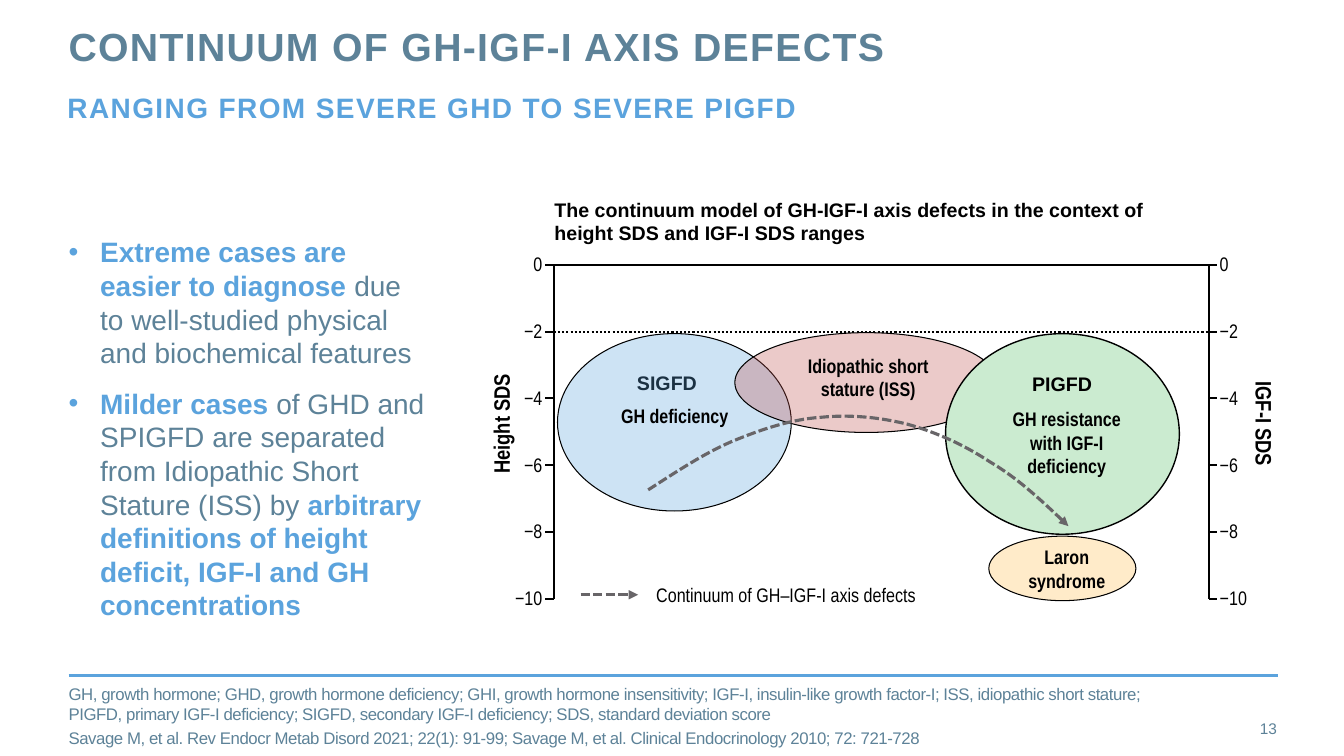
from lxml import etree
from pptx import Presentation
from pptx.dml.color import RGBColor
from pptx.enum.dml import MSO_LINE
from pptx.enum.shapes import MSO_CONNECTOR, MSO_SHAPE
from pptx.enum.text import MSO_ANCHOR, PP_ALIGN
from pptx.oxml.ns import qn
from pptx.util import Pt

LEFT, CENTER, RIGHT = PP_ALIGN.LEFT, PP_ALIGN.CENTER, PP_ALIGN.RIGHT
TOP, MIDDLE = MSO_ANCHOR.TOP, MSO_ANCHOR.MIDDLE
STRAIGHT, ELLIPSE = MSO_CONNECTOR.STRAIGHT, MSO_SHAPE.OVAL
DASHED, DOTTED = MSO_LINE.SQUARE_DOT, MSO_LINE.ROUND_DOT

BLACK = RGBColor(0x00, 0x00, 0x00)
SKY = RGBColor(0x5B, 0xA3, 0xDD)
SLATE = RGBColor(0x5D, 0x82, 0x98)
GREY = RGBColor(0x68, 0x65, 0x68)
ROSE = RGBColor(0xC0, 0x50, 0x4D)
MINT = RGBColor(0xCB, 0xEB, 0xD0)
AMBER = RGBColor(0xFF, 0xA4, 0x02)

SANS, NARROW = "Arial", "Arial Narrow"

MARGIN = 49
AXIS_LEFT, AXIS_RIGHT = 395.5, 863.5
AXIS_TOP, TICK_STEP, TICK_LENGTH = 189.2, 47.7, 6
TICKS = ["0", "−2", "−4", "−6", "−8", "−10"]
AXIS_BOTTOM = AXIS_TOP + TICK_STEP * (len(TICKS) - 1)

BULLETS = [
    [("Extreme cases are easier to diagnose ", True),
     ("due to well-studied physical and biochemical features", False)],
    [("Milder cases ", True),
     ("of GHD and SPIGFD are separated from Idiopathic Short Stature (ISS) by ", False),
     ("arbitrary definitions of height deficit, IGF-I and GH concentrations", True)],
]
FOOTNOTES = [
    "GH, growth hormone; GHD, growth hormone deficiency; GHI, growth hormone insensitivity; "
    "IGF-I, insulin-like growth factor-I; ISS, idiopathic short stature; PIGFD, primary IGF-I "
    "deficiency; SIGFD, secondary IGF-I deficiency; SDS, standard deviation score",
    "Savage M, et al. Rev Endocr Metab Disord 2021; 22(1): 91-99; "
    "Savage M, et al. Clinical Endocrinology 2010; 72: 721-728",
]
# Start point, then two control points and an end point per Bézier segment
CONTINUUM = [
    (463, 349.9), (483.1, 337), (502.6, 324), (522.7, 315.4),
    (543.6, 306.7), (565.2, 299.5), (586.1, 298.1),
    (607.7, 295.9), (628.6, 298.1), (648.7, 303.1),
    (668.9, 308.9), (688.3, 317.5), (707, 329.8),
    (726.5, 341.3), (745.2, 358.6), (763.2, 375.8),
]


def add_frame(slide, left, top, width, height, anchor=TOP, rotation=0):
    """Add a wrapping text box without insets and return its text frame."""
    box = slide.shapes.add_textbox(Pt(left), Pt(top), Pt(width), Pt(height))
    box.rotation = rotation
    frame = box.text_frame
    frame.word_wrap = True
    frame.vertical_anchor = anchor
    frame.margin_left = frame.margin_right = frame.margin_top = frame.margin_bottom = 0
    return frame


def style(paragraph, size, color, bold=False, font=SANS, align=LEFT, tracking=0):
    """Set the paragraph font; tracking is letter spacing in hundredths of a point."""
    paragraph.alignment = align
    paragraph.font.size = Pt(size)
    paragraph.font.name = font
    paragraph.font.bold = bold
    paragraph.font.color.rgb = color
    if tracking:
        paragraph._p.pPr.find(qn("a:defRPr")).set("spc", str(tracking))


def add_label(slide, text, box, size, color=BLACK, anchor=TOP, rotation=0, **font):
    paragraph = add_frame(slide, *box, anchor, rotation).paragraphs[0]
    paragraph.text = text
    style(paragraph, size, color, **font)
    return paragraph


def add_diagram_label(slide, text, left, top, width, lines=1):
    add_label(slide, text, (left, top, width, 17 * lines), 14,
              bold=True, font=NARROW, align=CENTER)


def add_bullets(slide):
    frame = add_frame(slide, MARGIN, 167.8, 257.8, 300)
    for index, parts in enumerate(BULLETS):
        paragraph = frame.paragraphs[0] if index == 0 else frame.add_paragraph()
        properties = paragraph._p.get_or_add_pPr()
        properties.set("marL", str(Pt(22.5)))
        properties.set("indent", str(-Pt(22.5)))
        if index:
            paragraph.space_before = Pt(12)
        bullet_color = etree.SubElement(properties, qn("a:buClr"))
        etree.SubElement(bullet_color, qn("a:srgbClr"), val=str(SKY))
        etree.SubElement(properties, qn("a:buFont"), typeface=SANS)
        etree.SubElement(properties, qn("a:buChar"), char="•")
        style(paragraph, 20, SLATE)
        for text, strong in parts:
            run = paragraph.add_run()
            run.text = text
            run.font.bold = strong
            run.font.color.rgb = SKY if strong else SLATE


def add_footnotes(slide):
    frame = add_frame(slide, MARGIN, 496.8, 801.4, 28.8, MIDDLE)
    for index, note in enumerate(FOOTNOTES):
        paragraph = frame.paragraphs[0] if index == 0 else frame.add_paragraph()
        paragraph.text = note
        if index:
            paragraph.space_before = Pt(3)
        style(paragraph, 12, SLATE, tracking=-30)


def style_line(line, color, width, dash=None, arrow=False):
    line.color.rgb = color
    line.width = Pt(width)
    if dash:
        line.dash_style = dash
    if arrow:
        etree.SubElement(line._get_or_add_ln(), qn("a:tailEnd"), type="triangle")


def add_line(slide, x1, y1, x2, y2, color=BLACK, width=1.5, **options):
    connector = slide.shapes.add_connector(STRAIGHT, Pt(x1), Pt(y1), Pt(x2), Pt(y2))
    style_line(connector.line, color, width, **options)
    etree.SubElement(connector._element.spPr, qn("a:effectLst"))


def add_ellipse(slide, left, top, width, height, color, opacity=100, outline=0.75):
    ellipse = slide.shapes.add_shape(ELLIPSE, Pt(left), Pt(top), Pt(width), Pt(height))
    ellipse.shadow.inherit = False
    ellipse.fill.solid()
    ellipse.fill.fore_color.rgb = color
    if opacity < 100:
        fill_color = ellipse._element.spPr.find(qn("a:solidFill")).find(qn("a:srgbClr"))
        etree.SubElement(fill_color, qn("a:alpha"), val=str(opacity * 1000))
    style_line(ellipse.line, BLACK, outline)


def add_curve(slide, points):
    """Build a freeform through all points, then turn each three into one Bézier segment."""
    (x, y), *rest = [(Pt(px), Pt(py)) for px, py in points]
    builder = slide.shapes.build_freeform(x, y)
    builder.add_line_segments(rest, close=False)
    curve = builder.convert_to_shape()
    curve.shadow.inherit = False
    curve.fill.background()
    style_line(curve.line, GREY, 2.25, dash=DASHED, arrow=True)
    outline = next(curve._element.iter(qn("a:path")))
    segments = outline.findall(qn("a:lnTo"))
    for start in range(0, len(segments), 3):
        bezier = etree.SubElement(outline, qn("a:cubicBezTo"))
        for segment in segments[start:start + 3]:
            bezier.append(segment[0])
            outline.remove(segment)


def add_axis(slide, x, direction, label_left, align):
    """Draw a vertical axis with ticks pointing left (-1) or right (1)."""
    add_line(slide, x, AXIS_TOP, x, AXIS_BOTTOM)
    for index, value in enumerate(TICKS):
        y = AXIS_TOP + index * TICK_STEP
        add_line(slide, x, y, x + direction * TICK_LENGTH, y)
        add_label(slide, value, (label_left, y - 9, 40, 17), 14, font=NARROW, align=align)


def add_diagram(slide):
    add_label(slide, "The continuum model of GH-IGF-I axis defects in the context of "
              "height SDS and IGF-I SDS ranges", (396, 141.1, 464.4, 34), 14, bold=True)
    add_label(slide, "SIGFD", (455, 265, 50, 17), 14, bold=True)
    add_axis(slide, AXIS_LEFT, -1, 347.4, RIGHT)
    add_axis(slide, AXIS_RIGHT, 1, 871.2, LEFT)
    add_line(slide, AXIS_LEFT, AXIS_TOP, AXIS_RIGHT, AXIS_TOP)
    for title, left, rotation in (("Height SDS", 298, 270), ("IGF-I SDS", 843, 90)):
        add_label(slide, title, (left, 293, 120, 19.5), 16, rotation=rotation,
                  bold=True, font=NARROW, align=CENTER)

    add_ellipse(slide, 398.2, 238.3, 167, 126.7, SKY, opacity=30)
    add_ellipse(slide, 524.9, 237.6, 187.9, 71.3, ROSE, opacity=30)
    add_ellipse(slide, 675.4, 238.3, 167, 143.3, MINT, outline=1)
    add_ellipse(slide, 706.3, 383, 105.1, 46.1, AMBER, opacity=21)
    threshold = AXIS_TOP + TICK_STEP
    add_line(slide, AXIS_LEFT, threshold, AXIS_RIGHT, threshold, dash=DOTTED)

    add_diagram_label(slide, "GH deficiency", 422, 288.7, 120)
    add_diagram_label(slide, "Idiopathic short\vstature (ISS)", 560.2, 252.7, 120, 2)
    add_diagram_label(slide, "GH resistance\vwith IGF-I\vdeficiency", 702, 290.9, 120, 3)
    add_diagram_label(slide, "Laron\vsyndrome", 702, 389.5, 120, 2)
    add_label(slide, "PIGFD", (737.3, 265.7, 50, 17), 14, bold=True)

    add_curve(slide, CONTINUUM)
    add_line(slide, 414.7, 424.8, 455.8, 424.8, GREY, 2.25, dash=DASHED, arrow=True)
    add_label(slide, "Continuum of GH–IGF-I axis defects", (468.7, 416.2, 202.3, 17), 14,
              font=NARROW)


def main():
    deck = Presentation()
    deck.slide_width, deck.slide_height = Pt(960), Pt(540)
    slide = deck.slides.add_slide(deck.slide_layouts[6])
    title = add_label(slide, "CONTINUUM OF GH-IGF-I AXIS DEFECTS", (MARGIN, 19.4, 688.3, 40),
                      28, SLATE, bold=True, tracking=100)
    title.line_spacing = Pt(30)
    add_label(slide, "RANGING FROM SEVERE GHD TO SEVERE PIGFD", (48.2, 64.8, 864, 55.4),
              20, SKY, bold=True, tracking=100)
    add_bullets(slide)
    add_diagram(slide)
    add_line(slide, MARGIN, 482.4, 913, 482.4, SKY, 2)
    add_footnotes(slide)
    add_label(slide, "13", (850.3, 506.2, 61.9, 28.8), 11, SLATE, MIDDLE, align=RIGHT)
    deck.save("out.pptx")


if __name__ == "__main__":
    main()
